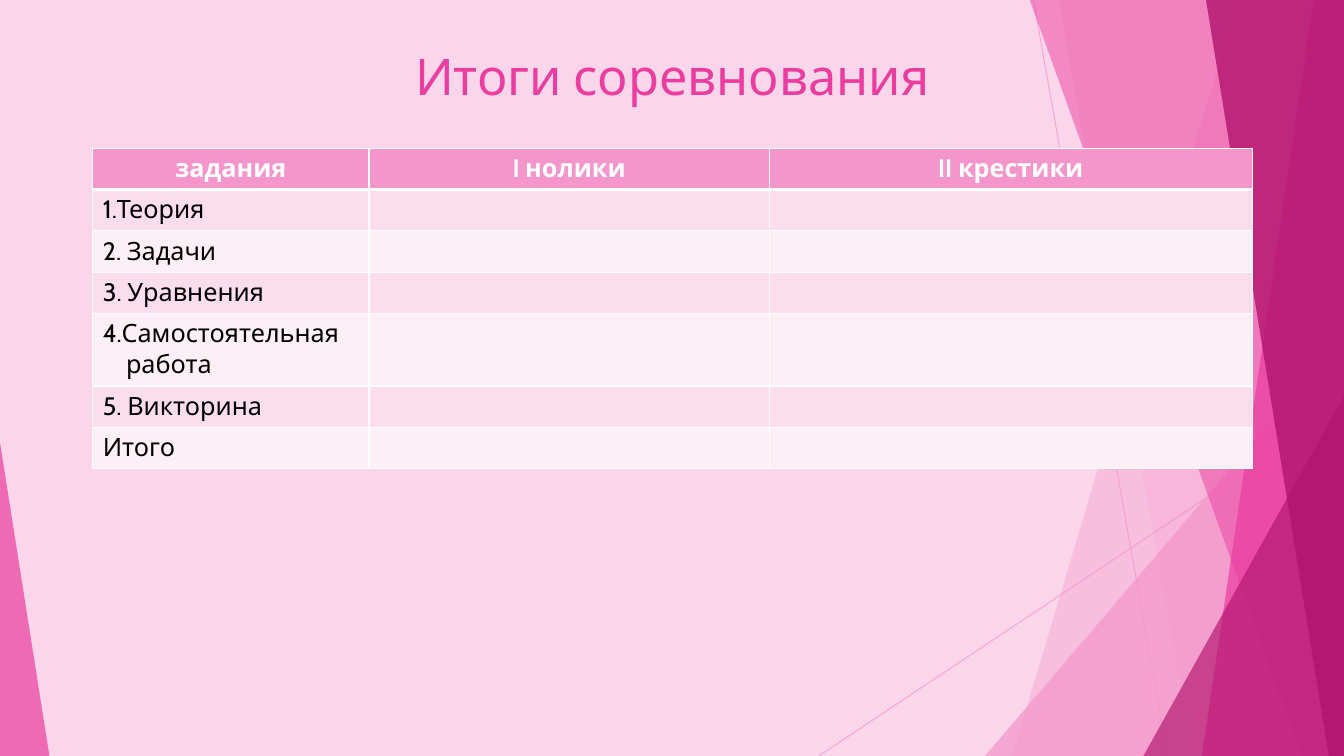
from dataclasses import dataclass

import pptx
import pptx.dml.color
import pptx.enum.shapes
import pptx.enum.text
import pptx.oxml
import pptx.oxml.ns
import pptx.util

Inches = pptx.util.Inches
Pt = pptx.util.Pt
qn = pptx.oxml.ns.qn
ALIGN = pptx.enum.text.PP_ALIGN

WIDTH, HEIGHT, TOP = 13.33, 7.5, -0.01
LIGHT, PINK, DARK, WHITE, BLACK = "F496CB", "EB3D9F", "B2136D", "FFFFFF", "000000"
BANDS = ("FBDDEC", "FDEFF6")


@dataclass
class Ray:
    x1: float
    y1: float
    x2: float
    y2: float


@dataclass
class Facet:
    """Area between a slanted left edge and the slide's right side."""
    top_x: float
    bottom_x: float
    color: str
    alpha: int


@dataclass
class Corner:
    """Triangle standing on the slide's bottom edge."""
    left: float
    top: float
    width: float
    apex: float
    color: str
    alpha: int


RAYS = [Ray(10.25, 0, 11.58, HEIGHT), Ray(WIDTH, 4.03, 8.12, HEIGHT)]
PIECES = [
    Facet(12.28, 10.04, LIGHT, 36),
    Facet(10.5, 11.83, LIGHT, 20),
    Corner(9.77, 3.33, 3.56, 1, LIGHT, 72),
    Facet(10.21, 12.91, PINK, 50),
    Facet(13.03, 11.92, PINK, 70),
    Facet(11.96, 13.18, DARK, 80),
    Corner(11.34, 3.93, 1.99, 1, DARK, 66),
    Corner(0, 4.39, 0.49, 0, PINK, 70),
]
COLUMNS = (2.74, 3.97, 4.79)
HEADERS = ("задания", "I нолики", "II крестики")
TASKS = (
    ("1.Теория",),
    ("2. Задачи",),
    ("3. Уравнения",),
    ("4.Самостоятельная", "работа"),
    ("5. Викторина",),
    ("Итого",),
)


def rgb(color: str) -> pptx.dml.color.RGBColor:
    return pptx.dml.color.RGBColor.from_string(color)


def paint(fill, color: str, alpha: int = 100) -> None:
    fill.solid()
    fill.fore_color.rgb = rgb(color)
    if alpha < 100:
        clr = fill._xPr.find(".//" + qn("a:srgbClr"))
        clr.append(pptx.oxml.parse_xml(
            f'<a:alpha xmlns:a="{pptx.oxml.ns.nsuri("a")}" val="{alpha * 1000}"/>'))


def write(p, text: str, *, size: float = 18, color: str = BLACK,
          bold: bool = False, align=ALIGN.LEFT, indent: float = 0) -> None:
    p.alignment = align
    if indent:
        p._p.get_or_add_pPr().set("marL", str(Inches(indent)))
    r = p.add_run()
    r.text = text
    r.font.name = "Cabin"
    r.font.size = Pt(size)
    r.font.bold = bold
    r.font.color.rgb = rgb(color)


def draw_ray(slide, ray: Ray) -> None:
    line = slide.shapes.add_connector(
        pptx.enum.shapes.MSO_CONNECTOR.STRAIGHT,
        *(Inches(v) for v in (ray.x1, ray.y1, ray.x2, ray.y2)))
    line.line.width = Pt(0.75)
    paint(line.line.fill, LIGHT, 70)
    line._element.spPr.append(pptx.oxml.parse_xml(
        f'<a:effectLst xmlns:a="{pptx.oxml.ns.nsuri("a")}"/>'))


def draw_piece(slide, piece: Facet | Corner) -> None:
    if isinstance(piece, Facet):
        top, bottom, right = Inches(TOP), Inches(HEIGHT), Inches(WIDTH)
        builder = slide.shapes.build_freeform(Inches(piece.top_x), top)
        builder.add_line_segments(
            [(right, top), (right, bottom), (Inches(piece.bottom_x), bottom)])
        sp = builder.convert_to_shape()
    else:
        sp = slide.shapes.add_shape(
            pptx.enum.shapes.MSO_SHAPE.ISOSCELES_TRIANGLE,
            Inches(piece.left), Inches(piece.top),
            Inches(piece.width), Inches(HEIGHT - piece.top))
        sp.adjustments[0] = piece.apex
    sp.shadow.inherit = False
    sp.line.fill.background()
    paint(sp.fill, piece.color, piece.alpha)


def style_cell(cell, color: str, top: float = 1, bottom: float = 1) -> None:
    paint(cell.fill, color)
    tcPr = cell._tc.get_or_add_tcPr()
    sides = (("lnL", 1), ("lnR", 1), ("lnT", top), ("lnB", bottom))
    for i, (side, width) in enumerate(sides):
        tcPr.insert(i, pptx.oxml.parse_xml(
            f'<a:{side} xmlns:a="{pptx.oxml.ns.nsuri("a")}" w="{Pt(width)}">'
            f'<a:solidFill><a:srgbClr val="{WHITE}"/></a:solidFill></a:{side}>'))


def add_results(slide) -> None:
    heights = [0.41] + [0.1 + 0.31 * len(task) for task in TASKS]
    table = slide.shapes.add_table(
        len(heights), len(COLUMNS), Inches(0.92), Inches(1.47),
        Inches(sum(COLUMNS)), Inches(sum(heights))).table
    table.horz_banding = False
    for column, width in zip(table.columns, COLUMNS):
        column.width = Inches(width)
    for row, height in zip(table.rows, heights):
        row.height = Inches(height)

    for c, header in enumerate(HEADERS):
        cell = table.cell(0, c)
        style_cell(cell, LIGHT, bottom=3)
        write(cell.text_frame.paragraphs[0], header, color=WHITE, bold=True,
              align=ALIGN.CENTER)
    for i, task in enumerate(TASKS):
        for c in range(len(COLUMNS)):
            style_cell(table.cell(i + 1, c), BANDS[i % 2], top=1 if i else 3)
        tf = table.cell(i + 1, 0).text_frame
        for n, text in enumerate(task):
            p = tf.add_paragraph() if n else tf.paragraphs[0]
            write(p, text, indent=0.23 * n)


def main() -> None:
    prs = pptx.Presentation()
    prs.slide_width, prs.slide_height = Inches(WIDTH), Inches(HEIGHT)
    slide = prs.slides.add_slide(prs.slide_layouts[6])

    # Background with its facets
    paint(slide.background.fill, "FBD5EA")
    for ray in RAYS:
        draw_ray(slide, ray)
    for piece in PIECES:
        draw_piece(slide, piece)

    # Title
    tf = slide.shapes.add_textbox(
        Inches(0.92), Inches(0.4), Inches(11.5), Inches(1.07)).text_frame
    tf.word_wrap = True
    write(tf.paragraphs[0], "Итоги соревнования", size=36, color=PINK,
          align=ALIGN.CENTER)

    # Results table
    add_results(slide)
    prs.save("out.pptx")


if __name__ == "__main__":
    main()
